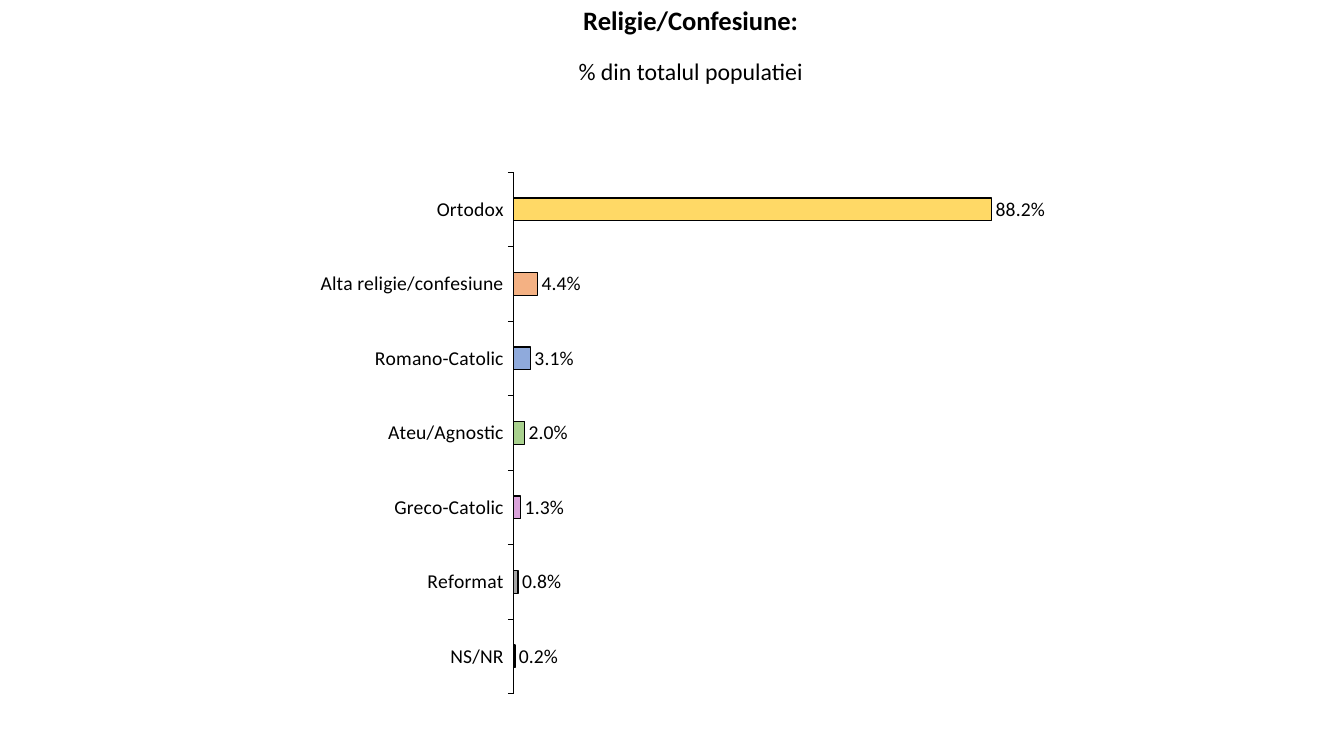
import pptx
import pptx.chart.data
import pptx.dml.color
import pptx.enum.chart
import pptx.enum.text
import pptx.oxml
import pptx.oxml.ns
import pptx.util
from pptx.util import Inches

RELIGIONS = [
    # name, share, bar colour
    ("Ortodox", 0.882, "FFD966"),
    ("Alta religie/confesiune", 0.044, "F4B183"),
    ("Romano-Catolic", 0.031, "8FAADC"),
    ("Ateu/Agnostic", 0.02, "A9D18E"),
    ("Greco-Catolic", 0.013, "DBA3DB"),
    ("Reformat", 0.008, "A6A6A6"),
    ("NS/NR", 0.002, "FFFFFF"),
]


def color(hex_string):
    return pptx.dml.color.RGBColor.from_string(hex_string)


class Page:
    font_name = "Calibri"
    ink = "000000"
    percent = "0.0%"

    def __init__(self, deck):
        self.slide = deck.slides.add_slide(deck.slide_layouts[6])

    def style_font(self, font, size, bold=False):
        font.name = self.font_name
        font.size = pptx.util.Pt(size)
        font.bold = bold
        font.color.rgb = color(self.ink)

    def style_line(self, line, width):
        line.color.rgb = color(self.ink)
        line.width = pptx.util.Pt(width)

    def heading(self, left, top, width, height, lines, gap):
        box = self.slide.shapes.add_textbox(
            Inches(left), Inches(top), Inches(width), Inches(height))
        frame = box.text_frame
        frame.word_wrap = True
        frame.vertical_anchor = pptx.enum.text.MSO_ANCHOR.BOTTOM
        frame.margin_bottom = Inches(0.32)
        for index, (text, size, bold) in enumerate(lines):
            para = frame.add_paragraph() if index else frame.paragraphs[0]
            para.text = text
            para.alignment = pptx.enum.text.PP_ALIGN.CENTER
            para.line_spacing = 0.8
            if index:
                para.space_before = pptx.util.Pt(gap)
            self.style_font(para.font, size, bold)

    def bar_chart(self, left, top, width, height, rows, plot):
        data = pptx.chart.data.CategoryChartData(number_format=self.percent)
        data.categories = [name for name, _, _ in rows]
        data.add_series("Series 1", [share for _, share, _ in rows])
        chart = self.slide.shapes.add_chart(
            pptx.enum.chart.XL_CHART_TYPE.BAR_CLUSTERED,
            Inches(left), Inches(top), Inches(width), Inches(height), data).chart
        chart.has_legend = False
        chart.has_title = False
        self.style_font(chart.font, 10)
        self.place_plot(chart, plot)

        # Axes
        names = chart.category_axis
        names.reverse_order = True
        names.has_major_gridlines = False
        names.major_tick_mark = pptx.enum.chart.XL_TICK_MARK.OUTSIDE
        self.style_font(names.tick_labels.font, 14)
        self.style_line(names.format.line, 0.75)
        shares = chart.value_axis
        shares.visible = False
        shares.has_major_gridlines = False
        shares.minimum_scale, shares.maximum_scale = 0, 1
        shares.major_unit = 0.5

        # Bars
        bars = chart.plots[0]
        bars.gap_width = 227
        bars.overlap = -48
        bars.vary_by_categories = False
        series = bars.series[0]
        series.invert_if_negative = False
        for target, fill in [(series, "FFFFFF")] + [
                (series.points[i], row[2]) for i, row in enumerate(rows)]:
            target.format.fill.solid()
            target.format.fill.fore_color.rgb = color(fill)
            self.style_line(target.format.line, 1)

        # Value labels
        labels = series.data_labels
        labels.show_value = True
        labels.number_format = self.percent
        labels.number_format_is_linked = False
        labels.position = pptx.enum.chart.XL_LABEL_POSITION.OUTSIDE_END
        self.style_font(labels.font, 14)

    def place_plot(self, chart, plot):
        """Fix the inner plot area as fractions of the chart."""
        area = chart.plots[0]._element.getparent()
        for old in area.findall(pptx.oxml.ns.qn("c:layout")):
            area.remove(old)
        settings = [("layoutTarget", "inner"), ("xMode", "edge"), ("yMode", "edge")]
        settings += zip("xywh", plot)
        inside = "".join(f'<c:{tag} val="{value}"/>' for tag, value in settings)
        area.insert(0, pptx.oxml.parse_xml(
            f'<c:layout {pptx.oxml.ns.nsdecls("c")}>'
            f"<c:manualLayout>{inside}</c:manualLayout></c:layout>"))


def main():
    deck = pptx.Presentation()
    deck.slide_width, deck.slide_height = Inches(13.33), Inches(7.5)
    page = Page(deck)
    page.bar_chart(2.04, 1.59, 9.43, 5.6, RELIGIONS, (0.324, 0.021, 0.57, 0.924))
    page.heading(0.54, 0.31, 12.62, 0.85, [
        ("Religie/Confesiune:", 19, True),
        ("% din totalul populatiei", 17, False),
    ], gap=18.5)
    deck.save("out.pptx")


if __name__ == "__main__":
    main()
